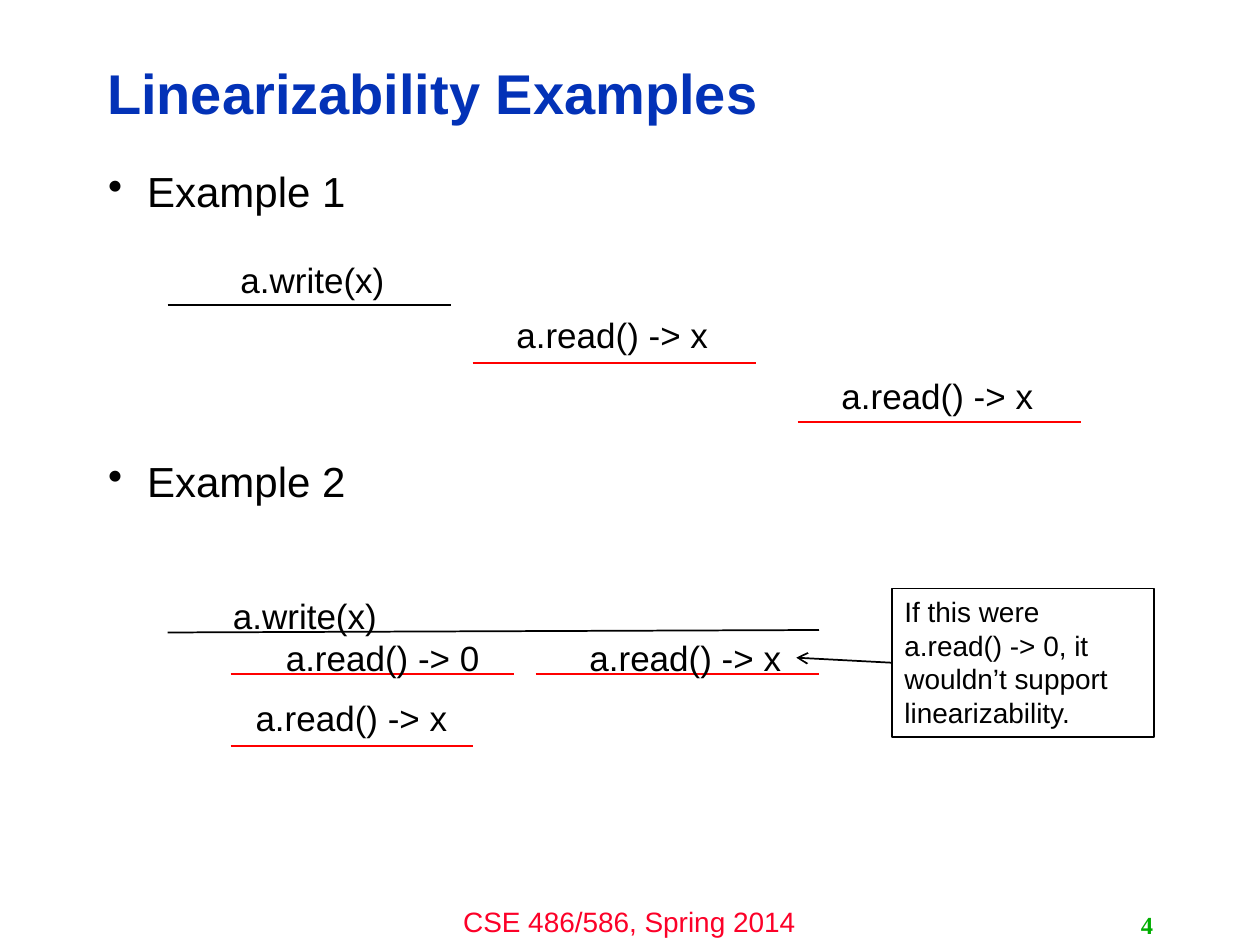
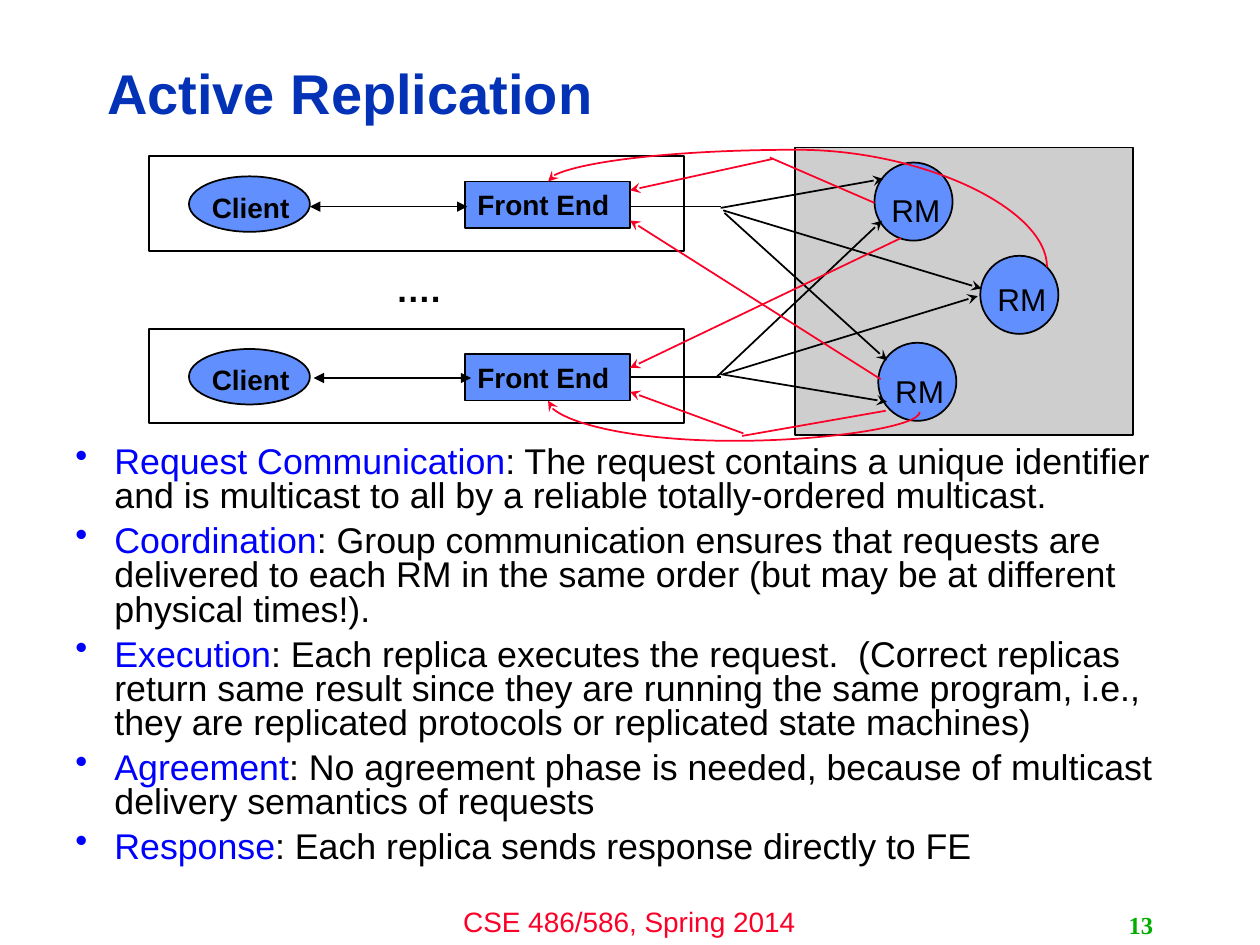
"""Build two lecture slides on linearizability and active replication."""
from dataclasses import dataclass

from lxml import etree
from pptx import Presentation
from pptx.dml.color import RGBColor
from pptx.enum.shapes import MSO_CONNECTOR, MSO_SHAPE
from pptx.enum.text import MSO_ANCHOR, MSO_AUTO_SIZE, PP_ALIGN
from pptx.oxml.ns import qn
from pptx.util import Inches, Pt

STRAIGHT, CURVE = MSO_CONNECTOR.STRAIGHT, MSO_CONNECTOR.CURVE
RECTANGLE, OVAL = MSO_SHAPE.RECTANGLE, MSO_SHAPE.OVAL
LEFT, CENTER, RIGHT = PP_ALIGN.LEFT, PP_ALIGN.CENTER, PP_ALIGN.RIGHT
TOP, MIDDLE = MSO_ANCHOR.TOP, MSO_ANCHOR.MIDDLE
FIXED_SIZE = MSO_AUTO_SIZE.NONE
TITLE_ONLY = 5


@dataclass(frozen=True)
class Theme:
    """Colours, fonts and type sizes shared by the slides."""
    sans: str = "Arial"
    serif: str = "Times New Roman"
    black: str = "000000"
    title_blue: str = "0332B7"
    term_blue: str = "0000FF"
    node_blue: str = "618FFD"
    panel_gray: str = "CECECE"
    read_red: str = "FF0000"
    reply_red: str = "FC0128"
    number_green: str = "00AE00"
    title_size: float = 32
    heading_size: float = 24
    step_size: float = 20.4
    operation_size: float = 20
    replica_size: float = 18
    label_size: float = 16
    number_size: float = 14


THEME = Theme()
FOOTER = "CSE 486/586, Spring 2014"
STEPS = [
    ("Request Communication", ": The request contains a unique identifier and is "
     "multicast to all by a reliable totally-ordered multicast."),
    ("Coordination", ": Group communication ensures that requests are delivered to "
     "each RM in the same order (but may be at different physical times!)."),
    ("Execution", ": Each replica executes the request.  (Correct replicas return "
     "same result since they are running the same program, i.e., they are "
     "replicated protocols or replicated state machines)"),
    ("Agreement", ": No agreement phase is needed, because of multicast delivery "
     "semantics of requests"),
    ("Response", ": Each replica sends response directly to FE"),
]


def rgb(color):
    """Return a colour object for a hex string."""
    return RGBColor.from_string(color)


def style_font(font, size, color=THEME.black, bold=False, name=THEME.sans):
    """Set the face, size, weight and colour of a font."""
    font.name, font.size, font.bold = name, Pt(size), bold
    font.color.rgb = rgb(color)


def add_label(page, text, place, size, align=LEFT, wrap=True, anchor=TOP, **font):
    """Add a text box holding one paragraph."""
    box = page.shapes.add_textbox(*map(Inches, place))
    frame = box.text_frame
    frame.word_wrap, frame.vertical_anchor = wrap, anchor
    para = frame.paragraphs[0]
    para.text, para.alignment = text, align
    style_font(para.font, size, **font)


def add_bullets(page, items, place, size, line_spacing, gap):
    """Add a bulleted list whose items are lists of (text, colour) spans."""
    frame = page.shapes.add_textbox(*map(Inches, place)).text_frame
    frame.word_wrap = True
    for index, spans in enumerate(items):
        para = frame.paragraphs[0] if index == 0 else frame.add_paragraph()
        properties = para._p.get_or_add_pPr()
        properties.set("marL", str(Inches(0.31)))
        properties.set("indent", str(-Inches(0.31)))
        etree.SubElement(properties, qn("a:buChar")).set("char", "•")
        para.line_spacing = line_spacing
        para.space_before = Pt(gap if index else 0)
        style_font(para.font, size)
        for text, color in spans:
            span = para.add_run()
            span.text = text
            span.font.color.rgb = rgb(color)


def add_outlined(page, kind, place, fill=None, width=1, text="", bold=False):
    """Add a black-outlined shape, optionally filled and labelled."""
    shape = page.shapes.add_shape(kind, *map(Inches, place))
    shape.shadow.inherit = False
    shape.line.color.rgb, shape.line.width = rgb(THEME.black), Pt(width)
    if fill:
        shape.fill.solid()
        shape.fill.fore_color.rgb = rgb(fill)
    else:
        shape.fill.background()
    if text:
        frame = shape.text_frame
        frame.word_wrap, frame.vertical_anchor = True, TOP
        para = frame.paragraphs[0]
        para.text, para.alignment = text, LEFT
        style_font(para.font, THEME.label_size, bold=bold)


def add_line(page, start, end, color=THEME.black, head=None, tail=None, kind=STRAIGHT):
    """Add a connector with optional arrowheads at its start and end."""
    line = page.shapes.add_connector(kind, *map(Inches, (*start, *end)))
    line.line.color.rgb, line.line.width = rgb(color), Pt(1)
    outline = line.line._get_or_add_ln()
    for tag, arrow in (("a:headEnd", head), ("a:tailEnd", tail)):
        if arrow:
            etree.SubElement(outline, qn(tag)).set("type", arrow)
    etree.SubElement(line._element.spPr, qn("a:effectLst"))
    return line


def add_reply_curve(page, start, end, rotation, bend):
    """Add a curved reply arrow turned by 90 or 270 degrees."""
    turn = 1 if rotation == 90 else -1
    center_x, center_y = (start[0] + end[0]) / 2, (start[1] + end[1]) / 2
    across = turn * (start[1] - end[1]) / 2
    along = turn * (end[0] - start[0]) / 2
    line = add_line(page, (center_x + across, center_y + along),
                    (center_x - across, center_y - along),
                    THEME.reply_red, tail="stealth", kind=CURVE)
    properties = line._element.spPr
    properties.find(qn("a:xfrm")).set("rot", str(rotation * 60000))
    guides = properties.find(qn("a:prstGeom")).find(qn("a:avLst"))
    guide = etree.SubElement(guides, qn("a:gd"))
    guide.set("name", "adj1")
    guide.set("fmla", f"val {round(bend * 100000)}")


def add_page(deck, title, number):
    """Add a slide with its title, course footer and slide number."""
    page = deck.slides.add_slide(deck.slide_layouts[TITLE_ONLY])
    box = page.shapes.title
    box.left, box.top, box.width, box.height = map(Inches, (0.75, 0.36, 7.98, 0.81))
    frame = box.text_frame
    frame.auto_size, frame.vertical_anchor = FIXED_SIZE, MIDDLE
    para = frame.paragraphs[0]
    para.text, para.alignment, para.line_spacing = title, LEFT, 0.9
    style_font(para.font, THEME.title_size, THEME.title_blue, bold=True)
    add_label(page, FOOTER, (3.33, 7.13, 3.33, 0.37), THEME.label_size, CENTER,
              color=THEME.reply_red)
    add_label(page, str(number), (7.17, 7.18, 2.08, 0.32), THEME.number_size, RIGHT,
              anchor=MIDDLE, color=THEME.number_green, bold=True, name=THEME.serif)
    return page


def add_operation(page, text, label_at, start, end, color=THEME.read_red):
    """Add an operation name with the line for its time span."""
    add_line(page, start, end, color)
    width = 1.36 if "write" in text else 1.74
    add_label(page, text, (*label_at, width, 0.44), THEME.operation_size, wrap=False)


def build_linearizability(deck):
    """Build the slide with two histories of reads and writes."""
    page = add_page(deck, "Linearizability Examples", 4)
    headings = [[(f"Example {number}", THEME.black)] for number in (1, 2)]
    add_bullets(page, headings, (0.76, 1.31, 8.4, 5.39), THEME.heading_size, 0.9, 140)
    write, read_new, read_old = "a.write(x)", "a.read() -> x", "a.read() -> 0"
    add_operation(page, write, (1.81, 2), (1.33, 2.42), (3.58, 2.42), THEME.black)
    add_operation(page, write, (1.75, 4.67), (1.33, 5.02), (6.5, 5), THEME.black)
    for text, label_at, left, right, level in (
            (read_new, (4, 2.44), 3.75, 6, 2.88),
            (read_new, (6.58, 2.92), 6.33, 8.58, 3.35),
            (read_old, (2.17, 5), 1.83, 4.08, 5.35),
            (read_new, (4.58, 5), 4.25, 6.5, 5.35),
            (read_new, (1.93, 5.48), 1.83, 3.75, 5.92)):
        add_operation(page, text, label_at, (left, level), (right, level))
    add_outlined(page, RECTANGLE, (7.08, 4.67, 2.08, 1.18), width=0.75,
                 text="If this were a.read() -> 0, it wouldn’t support linearizability.")
    add_line(page, (7.08, 5.26), (6.32, 5.22), tail="arrow")


def add_client_row(page, top, arrow_left, arrow_level, link_level):
    """Add a client and its front end inside one frame."""
    add_outlined(page, RECTANGLE, (1.18, top, 4.25, 0.75))
    add_outlined(page, OVAL, (1.5, top + 0.16, 0.96, 0.44), THEME.node_blue)
    add_label(page, "Client", (1.51, top + 0.22, 0.96, 0.37), THEME.label_size,
              CENTER, bold=True)
    add_outlined(page, RECTANGLE, (3.69, top + 0.2, 1.31, 0.37), THEME.node_blue,
                 text="Front End", bold=True)
    add_line(page, (arrow_left, arrow_level), (arrow_left + 1.25, arrow_level),
             head="triangle", tail="triangle")
    add_line(page, (5.01, link_level), (5.72, link_level))


def add_replica(page, left, top, label_drop):
    """Add a replica manager circle with its label."""
    add_outlined(page, OVAL, (left, top, 0.62, 0.62), THEME.node_blue)
    add_label(page, "RM", (left - 0.04, top + label_drop, 0.74, 0.37),
              THEME.replica_size, CENTER)


def build_replication(deck):
    """Build the slide with the active replication diagram and steps."""
    page = add_page(deck, "Active Replication", 13)
    steps = [[(term, THEME.term_blue), (detail, THEME.black)] for term, detail in STEPS]
    add_bullets(page, steps, (0.5, 3.5, 9, 3.5), THEME.step_size, 0.8, 6)
    add_outlined(page, RECTANGLE, (6.31, 1.17, 2.68, 2.28), THEME.panel_gray)
    add_client_row(page, 1.24, 2.46, 1.64, 1.64)
    add_client_row(page, 2.61, 2.49, 3, 2.99)
    add_label(page, "….", (2.6, 2.07, 1.44, 0.44), THEME.operation_size, CENTER, bold=True)
    for left, top, label_drop in ((6.94, 1.29, 0.18), (7.78, 2.03, 0.14), (6.97, 2.72, 0.18)):
        add_replica(page, left, top, label_drop)
    for start, end in (((5.72, 1.65), (7.01, 1.42)), ((5.74, 1.67), (7.79, 2.29)),
                       ((5.75, 1.69), (7.04, 2.86)), ((5.69, 2.99), (7, 1.75)),
                       ((5.72, 2.97), (7.04, 3.19)), ((5.74, 2.97), (7.76, 2.35))):
        add_line(page, start, end, tail="stealth")
    for start, end, tail in (((6.94, 1.61), (6.11, 1.25), None),
                             ((6.14, 1.26), (5, 1.51), "stealth"),
                             ((6.99, 3.01), (5, 1.75), "stealth"),
                             ((7.03, 3.26), (5.89, 3.46), None),
                             ((5.9, 3.44), (5, 3.11), "stealth"),
                             ((7.15, 1.89), (5, 2.92), "stealth")):
        add_line(page, start, end, THEME.reply_red, tail=tail)
    add_reply_curve(page, (8.31, 2.12), (4.35, 1.44), 270, 1.37)
    add_reply_curve(page, (7.3, 3.27), (4.35, 3.18), 90, -2.54)


def main():
    """Build and save the deck."""
    deck = Presentation()
    deck.slide_width, deck.slide_height = Inches(10), Inches(7.5)
    build_linearizability(deck)
    build_replication(deck)
    deck.save("out.pptx")


if __name__ == "__main__":
    main()
